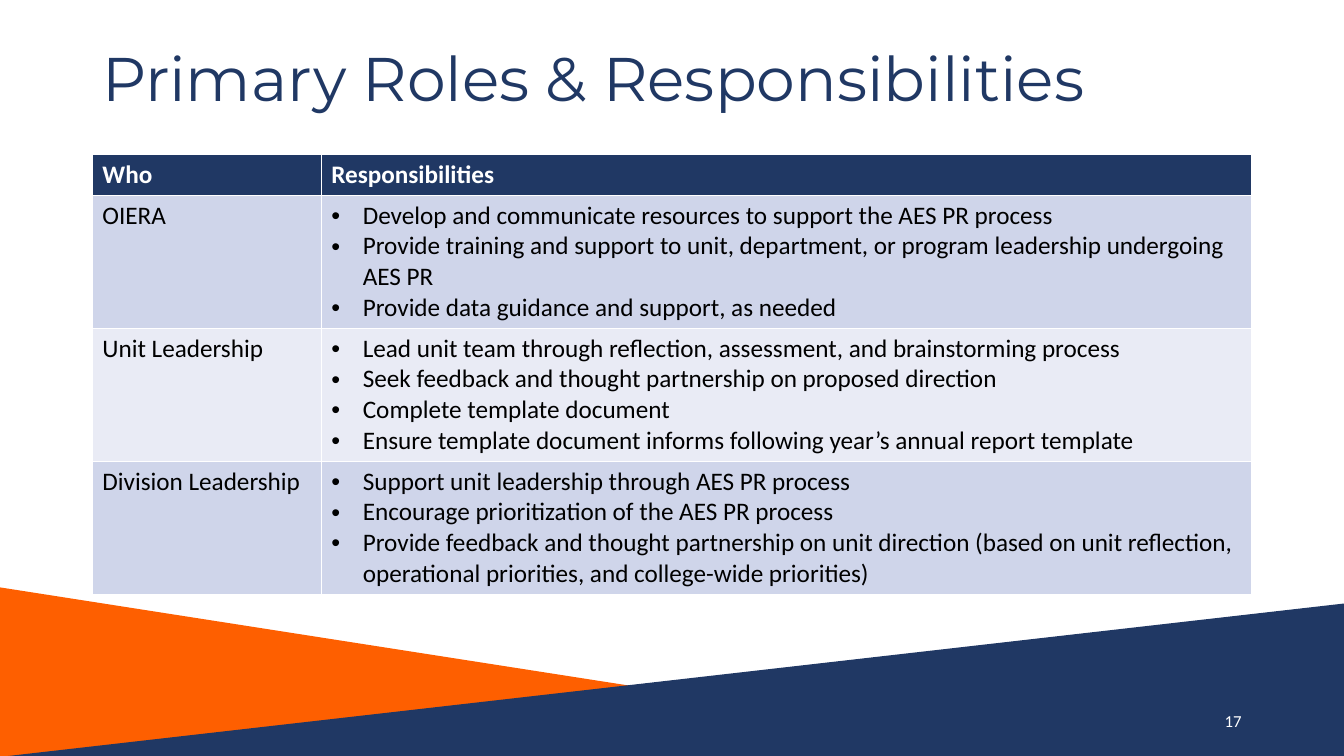
from lxml import etree
from pptx import Presentation
from pptx import util as u
from pptx.dml.color import RGBColor
from pptx.enum import shapes, text
from pptx.oxml import ns

Pt = u.Pt
COLORS = {"navy": "203864", "orange": "FE5F00", "white": "FFFFFF",
          "black": "000000", "band": "CFD5EA", "pale": "E9EBF5"}
ROLES = [
    ("OIERA", [
        "Develop and communicate resources to support the AES PR process",
        "Provide training and support to unit, department, or program leadership undergoing AES PR",
        "Provide data guidance and support, as needed"]),
    ("Unit Leadership", [
        "Lead unit team through reflection, assessment, and brainstorming process",
        "Seek feedback and thought partnership on proposed direction",
        "Complete template document",
        "Ensure template document informs following year’s annual report template"]),
    ("Division Leadership", [
        "Support unit leadership through AES PR process",
        "Encourage prioritization of the AES PR process",
        "Provide feedback and thought partnership on unit direction (based on unit reflection, "
        "operational priorities, and college-wide priorities)"]),
]


def color(name):
    return RGBColor.from_string(COLORS[name])


def style(para, size, ink, face="Calibri", bold=False):
    para.font.size = Pt(size)
    para.font.name = face
    para.font.bold = bold
    para.font.color.rgb = color(ink)


def add_wedge(page, box, fill, flipped=False):
    wedge = page.shapes.add_shape(shapes.MSO_SHAPE.ISOSCELES_TRIANGLE, *map(Pt, box))
    wedge.adjustments[0] = 1
    wedge.shadow.inherit = False
    wedge.fill.solid()
    wedge.fill.fore_color.rgb = color(fill)
    wedge.line.fill.background()
    if flipped:
        wedge.element.spPr.find(ns.qn("a:xfrm")).set("flipH", "1")


def add_label(page, box, words):
    frame = page.shapes.add_textbox(*map(Pt, box)).text_frame
    frame.word_wrap = True
    frame.vertical_anchor = text.MSO_ANCHOR.MIDDLE
    para = frame.paragraphs[0]
    para.text = words
    return para


def add_bullet(para, indent):
    props = para._p.get_or_add_pPr()
    props.set("marL", str(Pt(indent)))
    props.set("indent", str(-Pt(indent)))
    etree.SubElement(props, ns.qn("a:buFont"), typeface="Arial")
    etree.SubElement(props, ns.qn("a:buChar"), char="•")


def fill_cell(cell, lines, fill, ink, bold=False, bulleted=False):
    cell.fill.solid()
    cell.fill.fore_color.rgb = color(fill)
    frame = cell.text_frame
    for index, line in enumerate(lines):
        para = frame.add_paragraph() if index else frame.paragraphs[0]
        para.text = line
        if bulleted:
            add_bullet(para, 22.5)
        style(para, 18, ink, bold=bold)


def add_roles_table(page, box):
    left, top, width, height = box
    who_width, header_height = 163.5, 29.2
    table = page.shapes.add_table(len(ROLES) + 1, 2, *map(Pt, box)).table
    table.columns[0].width = Pt(who_width)
    table.columns[1].width = Pt(width - who_width)
    table.rows[0].height = Pt(header_height)
    for column, heading in enumerate(("Who", "Responsibilities")):
        fill_cell(table.cell(0, column), [heading], "navy", "white", bold=True)
    for row, (who, duties) in enumerate(ROLES, 1):
        table.rows[row].height = Pt((height - header_height) / len(ROLES))
        fill = "band" if row % 2 else "pale"
        fill_cell(table.cell(row, 0), [who], fill, "black")
        fill_cell(table.cell(row, 1), duties, fill, "black", bulleted=True)


def add_roles_page(deck):
    page = deck.slides.add_slide(deck.slide_layouts[6])
    add_wedge(page, (-3.6, 419, 775.4, 121), "orange", flipped=True)
    add_wedge(page, (5.8, 430.6, 958.3, 109.4), "navy")
    title = add_label(page, (66, 5.8, 828, 104.4), "Primary Roles & Responsibilities")
    title.line_spacing = 0.9
    style(title, 44, "navy", "Montserrat")
    add_roles_table(page, (66, 110.2, 828, 314.2))
    number = add_label(page, (678, 500.5, 216, 28.8), "17")
    number.alignment = text.PP_ALIGN.RIGHT
    style(number, 12, "white")


def main():
    deck = Presentation()
    deck.slide_width, deck.slide_height = Pt(960), Pt(540)
    add_roles_page(deck)
    deck.save("out.pptx")


if __name__ == "__main__":
    main()
